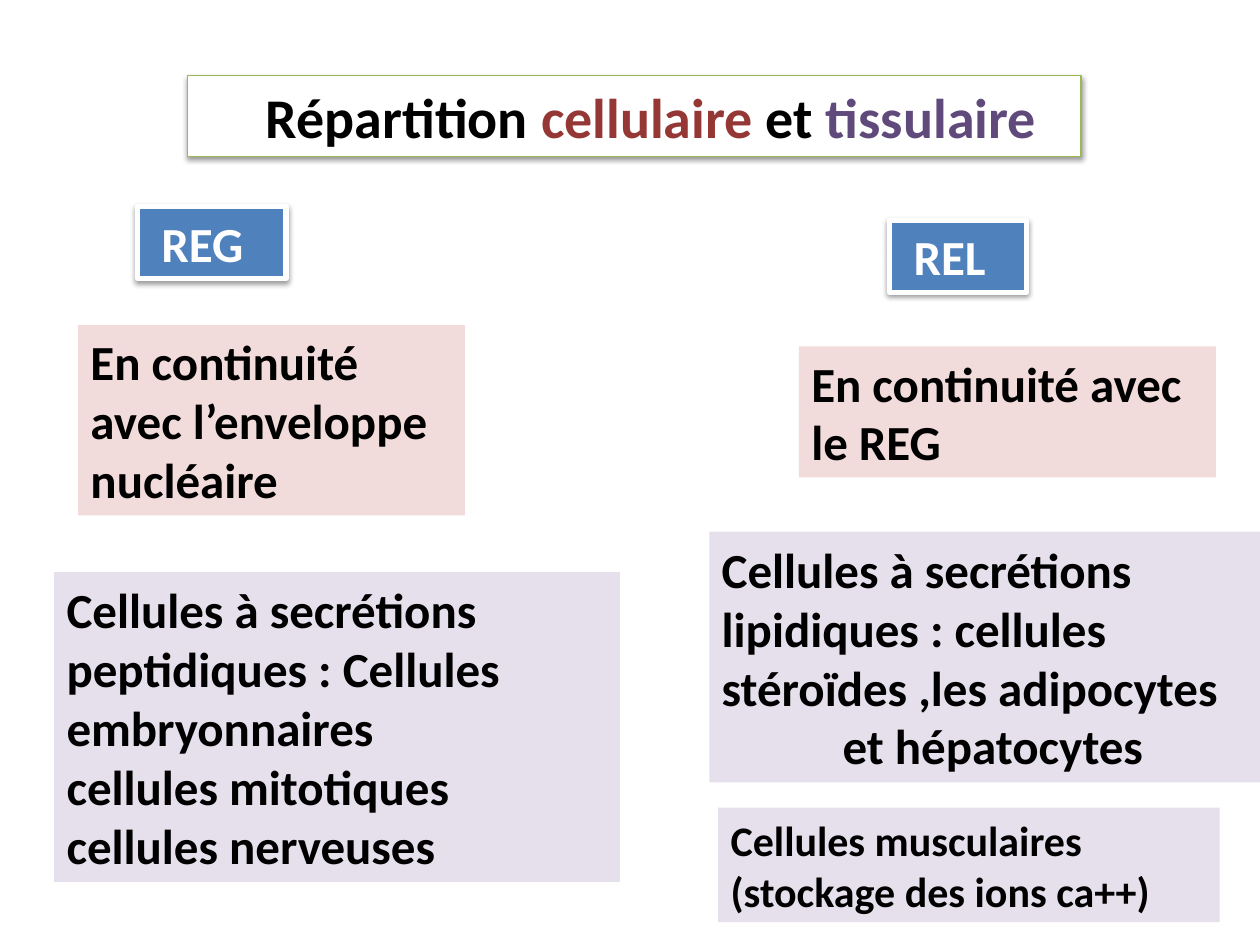
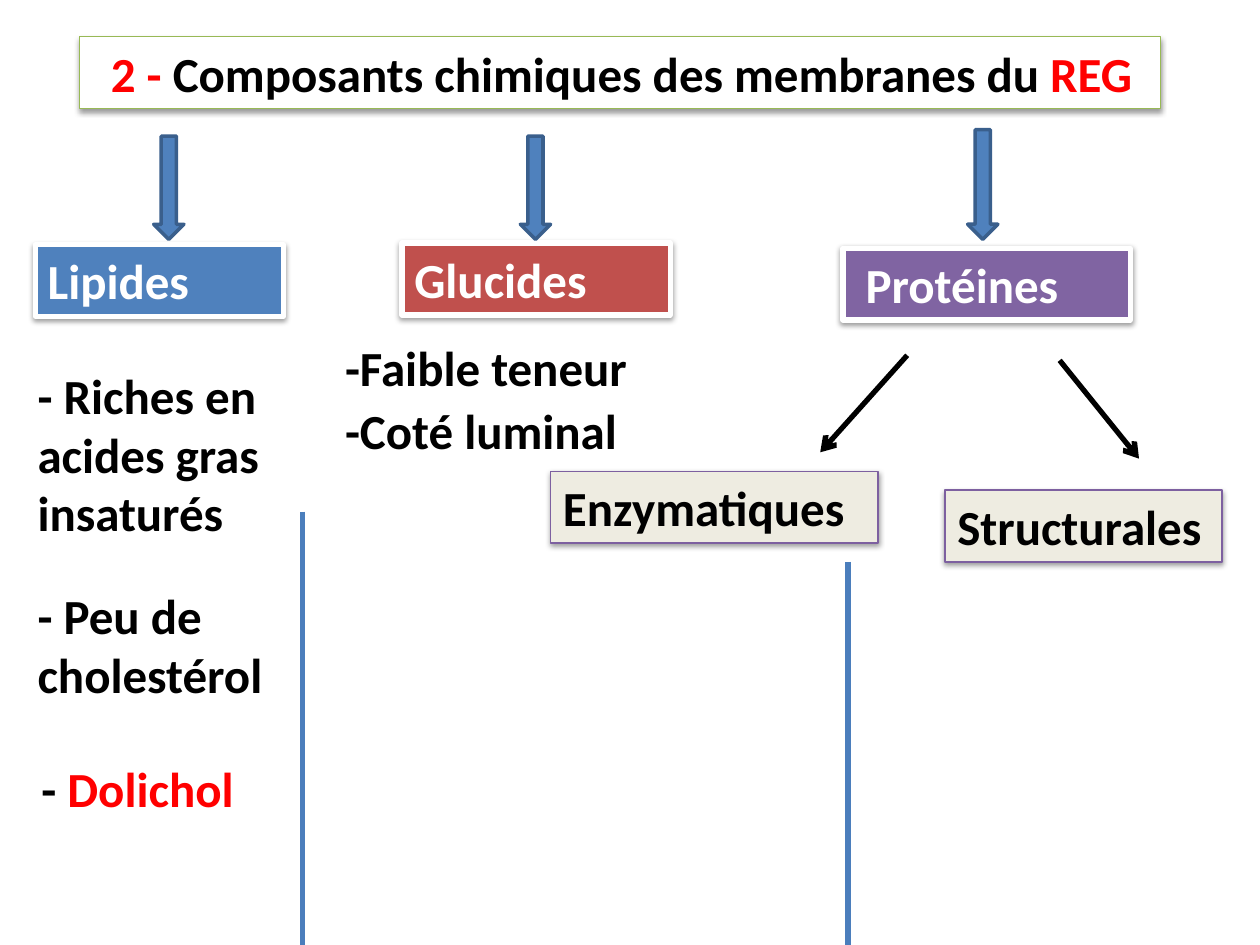
from pptx import Presentation
from pptx import util as u
from pptx.dml import color
from pptx.enum import shapes, text
from pptx.oxml import ns
from lxml import etree

COLORS = {
    "black": "000000", "white": "FFFFFF", "red": "FF0000",
    "brick": "953735", "violet": "604A7B", "green_line": "98B955",
    "blue": "4F81BD", "crimson": "C0504D", "purple": "8064A2",
    "pink": "F2DCDB", "lavender": "E6E0EC", "cream": "EEECE1",
    "purple_line": "7D60A0", "arrow_line": "3A5F8C", "divider": "4B7EBC",
}
FONT = {"name": "Calibri", "bold": True}
FRAME = {"word_wrap": True, "auto_size": text.MSO_AUTO_SIZE.SHAPE_TO_FIT_TEXT}
TITLE = {"fill": "white", "line": "green_line", "weight": 0.75, "shadow": True}
HEADING = {"line": "white", "weight": 3, "shadow": True, "font_color": "white"}
PROTEIN = {"fill": "cream", "line": "purple_line", "weight": 0.75, "shadow": True}


def rgb(name):
    return color.RGBColor.from_string(COLORS[name])


def apply(target, values):
    for name, value in values.items():
        setattr(target, name, value)


def add_xml(parent, tag, **attributes):
    return etree.SubElement(parent, ns.qn(tag), attributes)


def add_shadow(shape):
    effects = shape._element.spPr.find(ns.qn("a:effectLst"))
    shadow = add_xml(effects, "a:outerShdw", blurRad="39370", dist="20320",
                     dir="5400000", rotWithShape="0")
    shade = add_xml(shadow, "a:srgbClr", val=COLORS["black"])
    add_xml(shade, "a:alpha", val="38000")


def paint(shape, fill=None, line=None, weight=0, shadow=False):
    shape.shadow.inherit = False
    if fill:
        shape.fill.solid()
        shape.fill.fore_color.rgb = rgb(fill)
    if line:
        shape.line.color.rgb = rgb(line)
        shape.line.width = u.Pt(weight)
    else:
        shape.line.fill.background()
    if shadow:
        add_shadow(shape)


def write(shape, paragraphs, size, font_color, inset):
    frame = shape.text_frame
    apply(frame, {**FRAME, "margin_left": u.Inches(inset)})
    for index, runs in enumerate(paragraphs):
        paragraph = frame.paragraphs[0] if index == 0 else frame.add_paragraph()
        paragraph.alignment = text.PP_ALIGN.LEFT
        for words, run_color in [(runs, font_color)] if isinstance(runs, str) else runs:
            run = paragraph.add_run()
            run.text = words
            apply(run.font, {**FONT, "size": u.Pt(size)})
            run.font.color.rgb = rgb(run_color)


def add_box(slide, place, *paragraphs, size=28, font_color="black", inset=0.1, **style):
    shape = slide.shapes.add_shape(shapes.MSO_SHAPE.RECTANGLE, *map(u.Inches, place))
    paint(shape, **style)
    write(shape, paragraphs, size, font_color, inset)
    return shape


def add_text(slide, place, *paragraphs):
    shape = slide.shapes.add_textbox(*map(u.Inches, place))
    write(shape, paragraphs, 28, "black", 0.1)


def add_line(slide, start, end, line, arrow=False):
    connector = slide.shapes.add_connector(
        shapes.MSO_CONNECTOR.STRAIGHT, *map(u.Inches, start + end))
    connector.line.color.rgb = rgb(line)
    connector.line.width = u.Pt(3)
    properties = connector._element.spPr
    if arrow:
        add_xml(properties.find(ns.qn("a:ln")), "a:tailEnd", type="arrow")
    add_xml(properties, "a:effectLst")


def add_down_arrow(slide, left, top, bottom=1.9):
    place = (left, top, 0.24, bottom - top)
    shape = slide.shapes.add_shape(shapes.MSO_SHAPE.DOWN_ARROW, *map(u.Inches, place))
    paint(shape, "blue", "arrow_line", 2)


def build_distribution(slide):
    add_box(slide, (1.49, 0.6, 7.09, 0.64),
            [("Répartition ", "black"), ("cellulaire ", "brick"),
             ("et ", "black"), ("tissulaire", "violet")],
            size=32, inset=0.62, **TITLE)
    for place, label in [((1.09, 1.64, 1.18, 0.57), "REG"),
                         ((7.06, 1.75, 1.09, 0.57), "REL")]:
        add_box(slide, place, label, inset=0.19, fill="blue", **HEADING)
    add_box(slide, (0.62, 2.58, 3.07, 1.51),
            "En continuité avec l’enveloppe nucléaire", fill="pink")
    add_box(slide, (6.34, 2.75, 3.31, 1.04), "En continuité avec le REG", fill="pink")
    add_box(slide, (0.43, 4.54, 4.49, 2.46),
            "Cellules à secrétions peptidiques : Cellules embryonnaires",
            "cellules mitotiques", "cellules nerveuses", fill="lavender")
    lipid_cells = add_box(
        slide, (5.63, 4.22, 4.37, 1.99),
        "Cellules à secrétions lipidiques : cellules stéroïdes ,les adipocytes",
        "et hépatocytes", fill="lavender")
    last_line = lipid_cells.text_frame.paragraphs[-1]
    last_line._p.get_or_add_pPr().set("marL", str(u.Inches(0.96)))
    add_box(slide, (5.7, 6.41, 3.98, 0.91),
            "Cellules musculaires (stockage des ions ca++)", size=24, fill="lavender")


def build_components(slide):
    add_box(slide, (0.63, 0.29, 8.58, 0.57),
            [("2 - ", "red"), ("Composants chimiques des membranes du ", "black"),
             ("REG", "red")], inset=0.25, **TITLE)
    for place, label, fill, inset in [
            ((0.28, 1.94, 1.97, 0.57), "Lipides", "blue", 0.1),
            ((3.19, 1.93, 2.13, 0.57), "Glucides", "crimson", 0.1),
            ((6.69, 1.97, 2.28, 0.57), "Protéines", "purple", 0.18)]:
        add_box(slide, place, label, fill=fill, inset=inset, **HEADING)
    for place, note in [
            ((0.2, 2.85, 2.36, 1.51), "- Riches en acides gras insaturés"),
            ((0.2, 4.6, 2.36, 1.04), "- Peu de cholestérol"),
            ((0.23, 5.97, 2.13, 0.57), [("- ", "black"), ("Dolichol", "red")]),
            ((2.64, 2.63, 2.76, 0.57), "-Faible teneur"),
            ((2.64, 3.13, 2.83, 0.57), "-Coté luminal")]:
        add_text(slide, place, note)
    add_box(slide, (4.37, 3.74, 2.6, 0.57), "Enzymatiques", **PROTEIN)
    add_box(slide, (7.5, 3.89, 2.2, 0.57), "Structurales", **PROTEIN)
    add_line(slide, (7.2, 2.82), (6.51, 3.59), "black", arrow=True)
    add_line(slide, (8.41, 2.86), (9.04, 3.64), "black", arrow=True)
    for left, top in [(6.73, 4.46), (2.4, 4.06)]:
        add_line(slide, (left, top), (left, 7.5), "divider")
    for left, top in [(7.68, 1.03), (4.13, 1.08), (1.22, 1.08)]:
        add_down_arrow(slide, left, top)


def main():
    presentation = Presentation()
    presentation.slide_width = u.Inches(10)
    presentation.slide_height = u.Inches(7.5)
    for build in (build_distribution, build_components):
        build(presentation.slides.add_slide(presentation.slide_layouts[6]))
    presentation.save("out.pptx")


if __name__ == "__main__":
    main()
